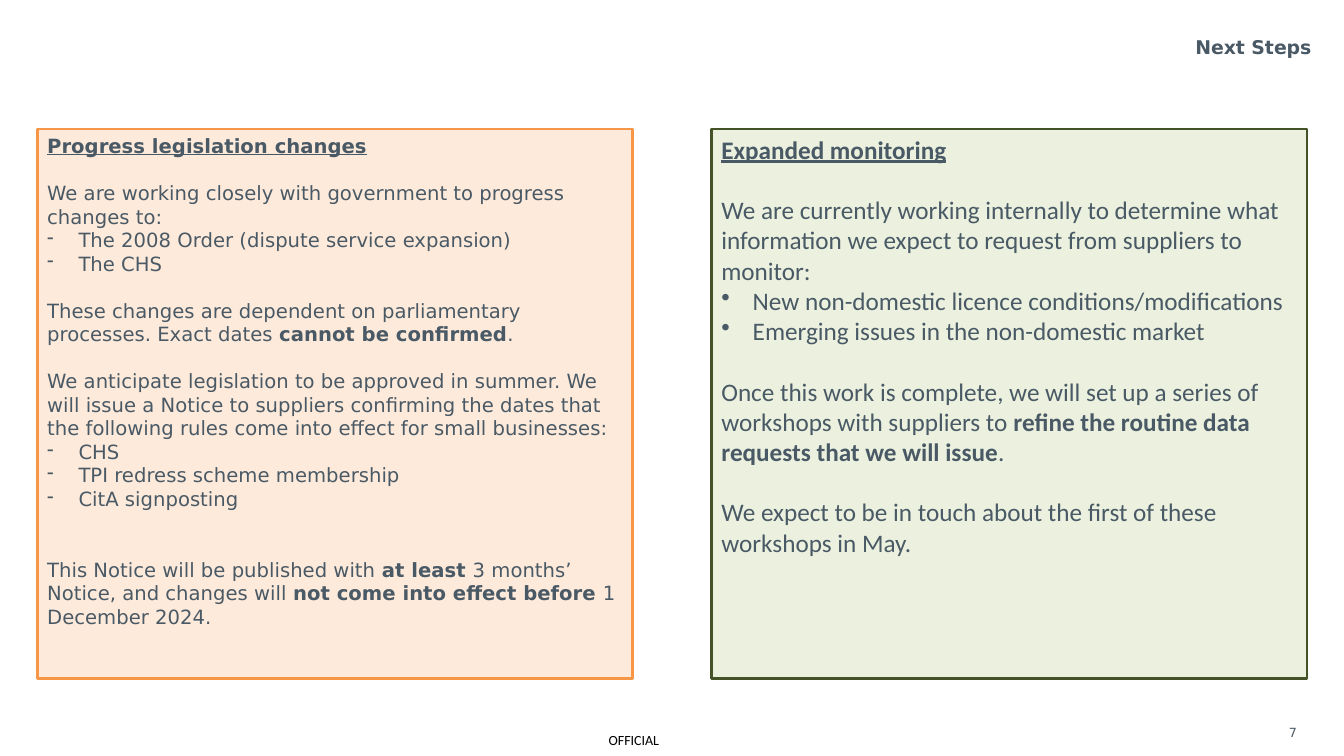
from lxml.etree import SubElement
from pptx import Presentation
from pptx.dml.color import RGBColor
from pptx.enum.shapes import MSO_SHAPE
from pptx.enum.text import MSO_ANCHOR, PP_ALIGN
from pptx.oxml.ns import qn
from pptx.util import Cm, Pt

# Content: (blank lines above, bullet, text); ** marks bold
LAWS = [
    (0, "", "**Progress legislation changes**"),
    (1, "", "We are working closely with government to progress changes to:"),
    (0, "-", "The 2008 Order (dispute service expansion)"),
    (0, "-", "The CHS"),
    (1, "", "These changes are dependent on parliamentary processes. "
            "Exact dates **cannot be confirmed**."),
    (1, "", "We anticipate legislation to be approved in summer. We will issue "
            "a Notice to suppliers confirming the dates that the following "
            "rules come into effect for small businesses:"),
    (0, "-", "CHS"),
    (0, "-", "TPI redress scheme membership"),
    (0, "-", "CitA signposting"),
    (2, "", "This Notice will be published with **at least **3 months’ Notice, "
            "and changes will **not come into effect before **1 December 2024."),
]
CHECKS = [
    (0, "", "**Expanded monitoring**"),
    (1, "", "We are currently working internally to determine what information "
            "we expect to request from suppliers to monitor:"),
    (0, "•", "New non-domestic licence conditions/modifications"),
    (0, "•", "Emerging issues in the non-domestic market"),
    (1, "", "Once this work is complete, we will set up a series of workshops "
            "with suppliers to **refine the routine data requests that we "
            "will issue**."),
    (1, "", "We expect to be in touch about the first of these workshops in May."),
]
SANS, BODY, SLATE = "DejaVu Sans", "Calibri", "495965"
# Panels: lines, fill, border, font, size, line height in points
PANELS = [
    (LAWS, "FDEADA", "F79646", SANS, 14, 16.8),
    (CHECKS, "EBF1DE", "445227", BODY, 18, 21.6),
]
# Labels: text, place in cm, inset in cm, anchor, format
LABELS = [
    ("OFFICIAL", (15.34, 18.44, 3.25, 0.43), 0, MSO_ANCHOR.TOP,
     dict(font=BODY, size=10, color="000000")),
    ("**Next Steps**", (11.07, 0.79, 22.23, 0.79), 0.25, MSO_ANCHOR.MIDDLE,
     dict(size=13.5, align=PP_ALIGN.RIGHT)),
    ("7", (32.23, 18.14, 1.6, 0.74), 0.25, MSO_ANCHOR.TOP, dict(size=9)),
]
LEFT, TOP, WIDE, HIGH, STEP, INDENT = 0.94, 3.25, 15.01, 13.84, 16.99, 0.79


def paint(part, color):
    part.rgb = RGBColor.from_string(color)


def write(para, text, font=SANS, size=14, color=SLATE, under=False,
          align=PP_ALIGN.LEFT, bullet="", space=0):
    para.alignment = align
    if bullet:
        props = para._p.get_or_add_pPr()
        props.set("marL", str(Cm(INDENT)))
        props.set("indent", str(-Cm(INDENT)))
        SubElement(props, qn("a:buChar")).set("char", bullet)
    if space:
        para.space_before = Pt(space)
    for i, piece in enumerate(text.split("**")):
        if piece:
            run = para.add_run()
            run.text = piece
            run.font.name, run.font.size = font, Pt(size)
            run.font.bold, run.font.underline = i % 2 == 1, under
            paint(run.font.color, color)


def set_frame(frame, inset, anchor):
    frame.word_wrap = True
    frame.vertical_anchor = anchor
    frame.margin_left = frame.margin_right = Cm(inset)
    frame.margin_top = frame.margin_bottom = Cm(inset / 2)


deck = Presentation()
deck.slide_width, deck.slide_height = Cm(33.87), Cm(19.05)
slide = deck.slides.add_slide(deck.slide_layouts[6])

# Footer, title and page number
for text, place, inset, anchor, style in LABELS:
    frame = slide.shapes.add_textbox(*map(Cm, place)).text_frame
    set_frame(frame, inset, anchor)
    write(frame.paragraphs[0], text, **style)

# Two panels side by side
for i, (lines, fill, edge, font, size, pitch) in enumerate(PANELS):
    box = slide.shapes.add_shape(MSO_SHAPE.RECTANGLE, Cm(LEFT + i * STEP),
                                 Cm(TOP), Cm(WIDE), Cm(HIGH))
    box.shadow.inherit = False
    box.fill.solid()
    paint(box.fill.fore_color, fill)
    paint(box.line.color, edge)
    box.line.width = Pt(2)
    frame = box.text_frame
    set_frame(frame, 0.25, MSO_ANCHOR.TOP)
    for j, (blank, bullet, text) in enumerate(lines):
        para = frame.add_paragraph() if j else frame.paragraphs[0]
        write(para, text, font=font, size=size, under=j == 0,
              bullet=bullet, space=blank * pitch)

deck.save("out.pptx")
